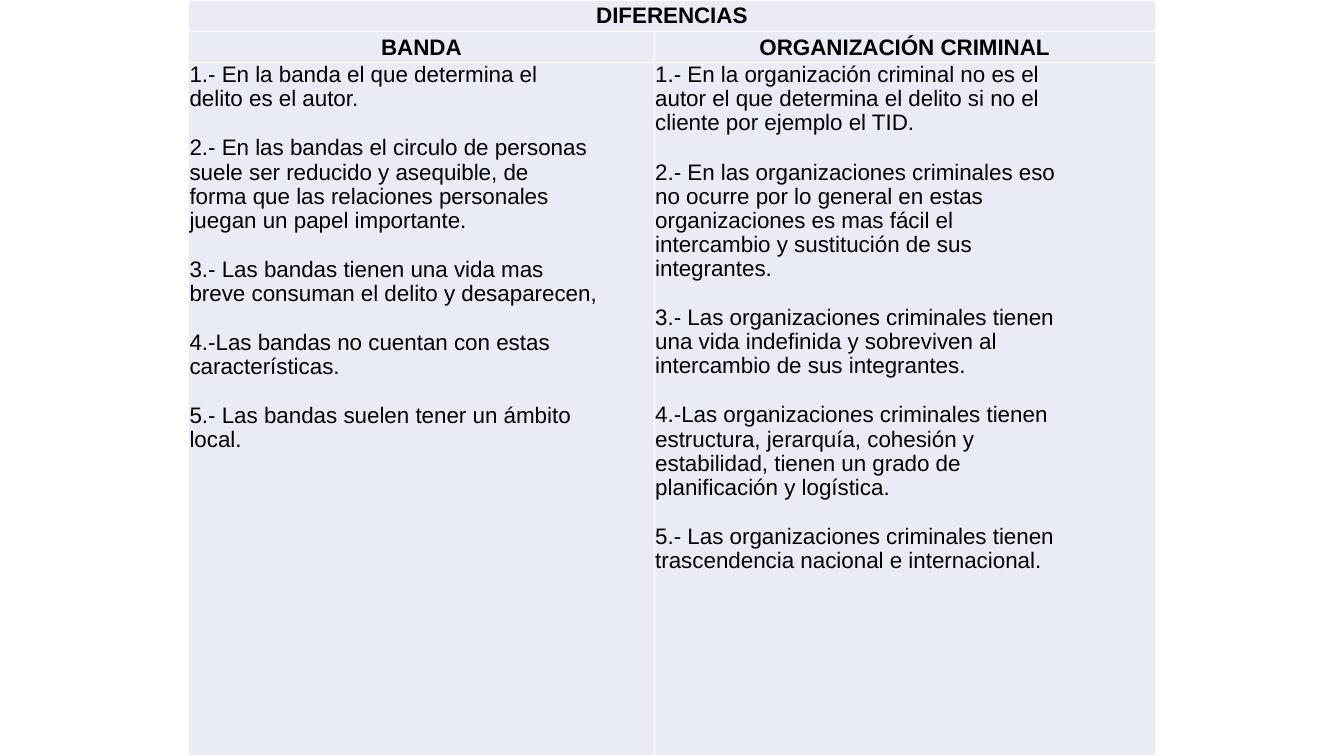
from copy import deepcopy
from dataclasses import dataclass

from lxml.etree import SubElement as Sub
from pptx import Presentation
from pptx.dml.color import RGBColor as Rgb
from pptx.enum.text import MSO_ANCHOR as Anchor, PP_ALIGN as Align
from pptx.oxml.ns import qn
from pptx.util import Emu, Inches, Pt


@dataclass(frozen=True)
class Theme:
    font: str = "Arial"
    size: float = 16
    ink: str = "000000"
    fill: str = "E9EBF5"
    rule: str = "FFFFFF"
    line: float = 0.97  # line spacing of the lists
    gap: float = 17.8  # space between list items, points
    pad: float = 0.01  # cell margin, inches


@dataclass(frozen=True)
class Column:
    width: float  # percent of the slide's width
    head: str
    items: tuple[str, ...]


THEME = Theme()
TITLE = "DIFERENCIAS"
LEFT = 14.03  # percent of the slide's width
ROWS = (4.13, 4.13, 91.74)  # percent of the slide's height

COLUMNS = (
    Column(34.65, "BANDA", (
        "1.- En la banda el que determina el\ndelito es el autor.",
        "2.- En las bandas el circulo de personas\nsuele ser reducido y asequible, de\n"
        "forma que las relaciones personales\njuegan un papel importante.",
        "3.- Las bandas tienen una vida mas\nbreve consuman el delito y desaparecen,",
        "4.-Las bandas no cuentan con estas\ncaracterísticas.",
        "5.- Las bandas suelen tener un ámbito\nlocal.",
    )),
    Column(37.28, "ORGANIZACIÓN CRIMINAL", (
        "1.- En la organización criminal no es el\nautor el que determina el delito si no el\n"
        "cliente por ejemplo el TID.",
        "2.- En las organizaciones criminales eso\nno ocurre por lo general en estas\n"
        "organizaciones es mas fácil el\nintercambio y sustitución de sus\nintegrantes.",
        "3.- Las organizaciones criminales tienen\nuna vida indefinida y sobreviven al\n"
        "intercambio de sus integrantes.",
        "4.-Las organizaciones criminales tienen\nestructura, jerarquía, cohesión y\n"
        "estabilidad, tienen un grado de\nplanificación y logística.",
        "5.- Las organizaciones criminales tienen\ntrascendencia nacional e internacional.",
    )),
)


def write(cell, *items: str, bold: bool = False, align=Align.LEFT,
          anchor=Anchor.TOP, line: float = 1.0, gap: float = 0) -> None:
    """Fill a cell with one paragraph per item."""
    cell.vertical_anchor = anchor
    frame = cell.text_frame
    for at, item in enumerate(items):
        para = frame.add_paragraph() if at else frame.paragraphs[0]
        para.text = item
        para.alignment = align
        para.line_spacing = line
        para.space_before = Pt(gap if at else 0)
        for run in para.runs:
            font = run.font
            font.name, font.size, font.bold = THEME.font, Pt(THEME.size), bold
            font.color.rgb = Rgb.from_string(THEME.ink)
        # Line breaks take the format of the text around them
        for brk in para._p.findall(qn("a:br")):
            brk.append(deepcopy(para.runs[0]._r.rPr))


def dress(cell) -> None:
    """Set margins, borders and fill of a cell."""
    cell.margin_left = cell.margin_right = cell.margin_top = Inches(THEME.pad)
    cell.margin_bottom = 0
    props = cell._tc.get_or_add_tcPr()
    for side in ("lnL", "lnR", "lnT", "lnB"):
        edge = Sub(props, qn(f"a:{side}"), w=str(Pt(1)))
        Sub(Sub(edge, qn("a:solidFill")), qn("a:srgbClr"), val=THEME.rule)
    cell.fill.solid()
    cell.fill.fore_color.rgb = Rgb.from_string(THEME.fill)


def main() -> None:
    deck = Presentation()
    deck.slide_width, deck.slide_height = Inches(13.33), Inches(7.5)
    slide = deck.slides.add_slide(deck.slide_layouts[6])

    def wide(share: float) -> Emu:
        return Emu(round(deck.slide_width * share / 100))

    def high(share: float) -> Emu:
        return Emu(round(deck.slide_height * share / 100))

    # Table grid
    span = sum(col.width for col in COLUMNS)
    table = slide.shapes.add_table(len(ROWS), len(COLUMNS), wide(LEFT), 0,
                                   wide(span), high(sum(ROWS))).table
    table.first_row = table.horz_banding = False
    for row, share in zip(table.rows, ROWS):
        row.height = high(share)
    for cell in table.iter_cells():
        dress(cell)

    # Title row across both columns
    head = dict(bold=True, align=Align.CENTER, anchor=Anchor.MIDDLE)
    table.cell(0, 0).merge(table.cell(0, len(COLUMNS) - 1))
    write(table.cell(0, 0), TITLE, **head)

    # Column heads and lists
    for at, col in enumerate(COLUMNS):
        table.columns[at].width = wide(col.width)
        write(table.cell(1, at), col.head, **head)
        write(table.cell(2, at), *col.items, line=THEME.line, gap=THEME.gap)

    deck.save("out.pptx")


if __name__ == "__main__":
    main()
